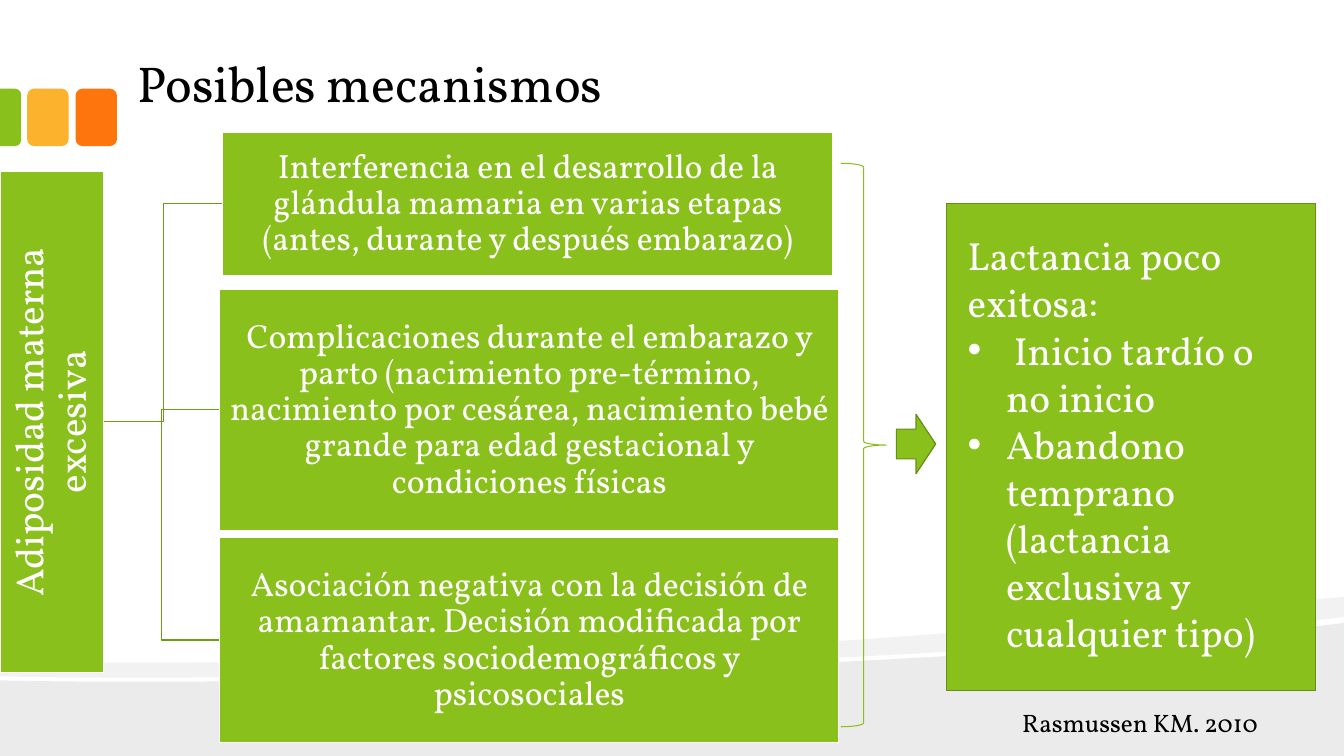
"""Build the slide on possible mechanisms linking maternal adiposity and lactation."""
from lxml import etree
from pptx import Presentation
from pptx.dml.color import RGBColor
from pptx.enum.shapes import MSO_CONNECTOR, MSO_SHAPE
from pptx.enum.text import MSO_ANCHOR, PP_ALIGN
from pptx.oxml.ns import qn
from pptx.util import Inches, Pt

RECT, ROUND, TAB = MSO_SHAPE.RECTANGLE, MSO_SHAPE.ROUNDED_RECTANGLE, MSO_SHAPE.ROUND_2_SAME_RECTANGLE
BRACE, ARROW, ELBOW = MSO_SHAPE.RIGHT_BRACE, MSO_SHAPE.RIGHT_ARROW, MSO_CONNECTOR.ELBOW
TOP, MIDDLE, BOTTOM = MSO_ANCHOR.TOP, MSO_ANCHOR.MIDDLE, MSO_ANCHOR.BOTTOM
LEFT, CENTER = PP_ALIGN.LEFT, PP_ALIGN.CENTER

GREEN = RGBColor(0x89, 0xC0, 0x1C)
EDGE = RGBColor(0x65, 0x8E, 0x15)
LINK = RGBColor(0x6E, 0x9A, 0x16)
AMBER = RGBColor(0xFC, 0xB2, 0x2C)
ORANGE = RGBColor(0xFE, 0x75, 0x0E)
WHITE = RGBColor(0xFF, 0xFF, 0xFF)
BLACK = RGBColor(0, 0, 0)
FONT = "Vollkorn"

TITLE = "Posibles mecanismos"
CAUSE = "Adiposidad materna excesiva"
CAUSE_BOX = (-1.97, 3.67, 4.97, 1.03)
MECHANISMS = [
    ("Interferencia en el desarrollo de la glándula mamaria en varias etapas "
     "(antes, durante y después embarazo)", (2.21, 1.31, 6.05, 1.42)),
    ("Complicaciones durante el embarazo y parto (nacimiento pre-término, nacimiento por cesárea, "
     "nacimiento bebé grande para edad gestacional y condiciones físicas", (2.18, 2.87, 6.14, 2.39)),
    ("Asociación negativa con la decisión de amamantar. Decisión modificada por factores "
     "sociodemográficos y psicosociales", (2.18, 5.33, 6.14, 2.04)),
]
OUTCOME = ["Lactancia poco exitosa:", " Inicio tardío o no inicio",
           "Abandono temprano (lactancia exclusiva y cualquier tipo)"]
CITATION = "Rasmussen KM. 2010"
WAVES = [
    (8, [[(13.33, 6.18)], [(13.33, 7.5)], [(0, 7.5)], [(0, 6.75)],
         [(3.52, 6.83), (10.42, 6.55), (13.33, 6.18)]]),
    (5, [[(13.33, 5.92)], [(13.33, 6.12)], [(12.55, 6.23), (11.49, 6.33), (10.29, 6.41)],
         [(6.98, 6.63), (2.58, 6.77), (0, 6.71)], [(0, 6.57)],
         [(6.52, 6.62), (9.71, 6.27), (13.33, 5.92)]]),
]
CURVE_STEPS = 24

prs = Presentation()
prs.slide_width, prs.slide_height = Inches(13.33), Inches(7.5)
s = prs.slides.add_slide(prs.slide_layouts[6])


def outline(steps):
    points = []
    for step in steps:
        if len(step) == 1:
            points += step
            continue
        curve = [points[-1]] + step
        for i in range(1, CURVE_STEPS + 1):
            t = i / CURVE_STEPS
            weights = ((1 - t) ** 3, 3 * t * (1 - t) ** 2, 3 * t * t * (1 - t), t ** 3)
            points.append(tuple(sum(w * pt[k] for w, pt in zip(weights, curve)) for k in (0, 1)))
    return [(Inches(x), Inches(y)) for x, y in points]


def add_wave(opacity, steps):
    points = outline(steps)
    builder = s.shapes.build_freeform(*points[0])
    builder.add_line_segments(points[1:], close=True)
    sp = builder.convert_to_shape()
    sp.shadow.inherit = False
    sp.line.fill.background()
    sp.fill.solid()
    sp.fill.fore_color.rgb = BLACK
    color = sp.fill._xPr.find(qn("a:solidFill"))[0]
    etree.SubElement(color, qn("a:alpha"), val=str(opacity * 1000))


def add_shape(kind, box, fill=None, line=None, width=0.85, rotation=0):
    sp = s.shapes.add_shape(kind, *map(Inches, box))
    sp.shadow.inherit = False
    sp.rotation = rotation
    if fill is None:
        sp.fill.background()
    else:
        sp.fill.solid()
        sp.fill.fore_color.rgb = fill
    if line is None:
        sp.line.fill.background()
    else:
        sp.line.color.rgb = line
        sp.line.width = Pt(width)
    return sp


def write(sp, lines, size, color, anchor=TOP, align=LEFT, insets=(0.1, 0.05), spacing=1.0):
    tf = sp.text_frame
    tf.word_wrap = True
    tf.vertical_anchor = anchor
    tf.margin_left = tf.margin_right = Inches(insets[0])
    tf.margin_top = tf.margin_bottom = Inches(insets[1])
    for i, text in enumerate(lines):
        p = tf.paragraphs[0] if i == 0 else tf.add_paragraph()
        p.text = text
        p.alignment = align
        p.line_spacing = spacing
        p.font.name, p.font.size, p.font.color.rgb = FONT, Pt(size), color
    return tf


def add_text(box, *args, **kwargs):
    return write(s.shapes.add_textbox(*map(Inches, box)), *args, **kwargs)


def add_bullet(p):
    pPr = p._p.get_or_add_pPr()
    pPr.set("marL", str(Inches(0.38)))
    pPr.set("indent", str(Inches(-0.38)))
    bullet_font = etree.Element(qn("a:buFont"), typeface="Arial")
    bullet = etree.Element(qn("a:buChar"), char="•")
    at = pPr.index(pPr.find(qn("a:lnSpc"))) + 1
    pPr.insert(at, bullet_font)
    pPr.insert(at + 1, bullet)


def add_link(x1, y1, x2, y2):
    link = s.shapes.add_connector(ELBOW, *map(Inches, (x1, y1, x2, y2)))
    link.line.color.rgb = LINK
    link.line.width = Pt(0.85)
    etree.SubElement(link._element.spPr, qn("a:effectLst"))


for opacity, steps in WAVES:
    add_wave(opacity, steps)

add_shape(ROUND, (0.75, 0.88, 0.41, 0.57), ORANGE)
add_shape(ROUND, (0.27, 0.88, 0.41, 0.57), AMBER)
tab = add_shape(TAB, (-0.18, 1.06, 0.57, 0.21), GREEN, rotation=90)
tab.adjustments[0] = 0.29
add_text((1.23, -0.23, 10.66, 1.42), [TITLE], 36, BLACK, BOTTOM, insets=(0.13, 0.07))

for _, (x, y, w, h) in reversed(MECHANISMS):
    add_link(1.03, 4.18, x, y + h / 2)

boxes = [(CAUSE, CAUSE_BOX, 28, 270)] + [(text, box, 24, 0) for text, box in MECHANISMS]
for text, box, size, rotation in boxes:
    sp = add_shape(RECT, box, GREEN, WHITE, rotation=rotation)
    write(sp, [text], size, WHITE, MIDDLE, CENTER, (0.02, 0.02), 0.9)

add_shape(BRACE, (8.34, 1.62, 0.45, 5.59), line=GREEN, width=0.75)
add_shape(RECT, (9.39, 2.02, 3.66, 4.83), GREEN, EDGE)
add_shape(ARROW, (8.89, 4.11, 0.39, 0.59), GREEN, EDGE)
tf = add_text((9.5, 2.25, 3.54, 4.34), OUTCOME, 28, WHITE)
for p in tf.paragraphs[1:]:
    add_bullet(p)
add_text((10.04, 6.97, 3.3, 0.4), [CITATION], 18, BLACK)

prs.save("out.pptx")
